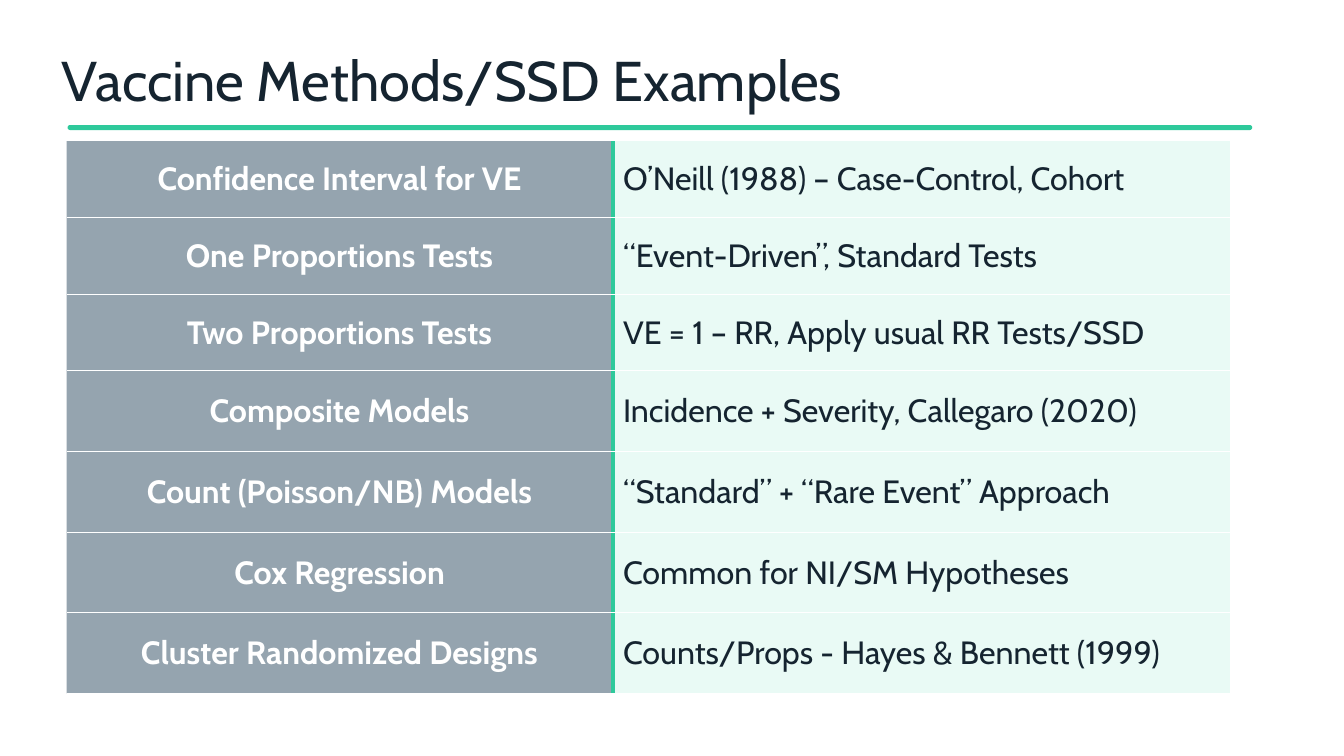
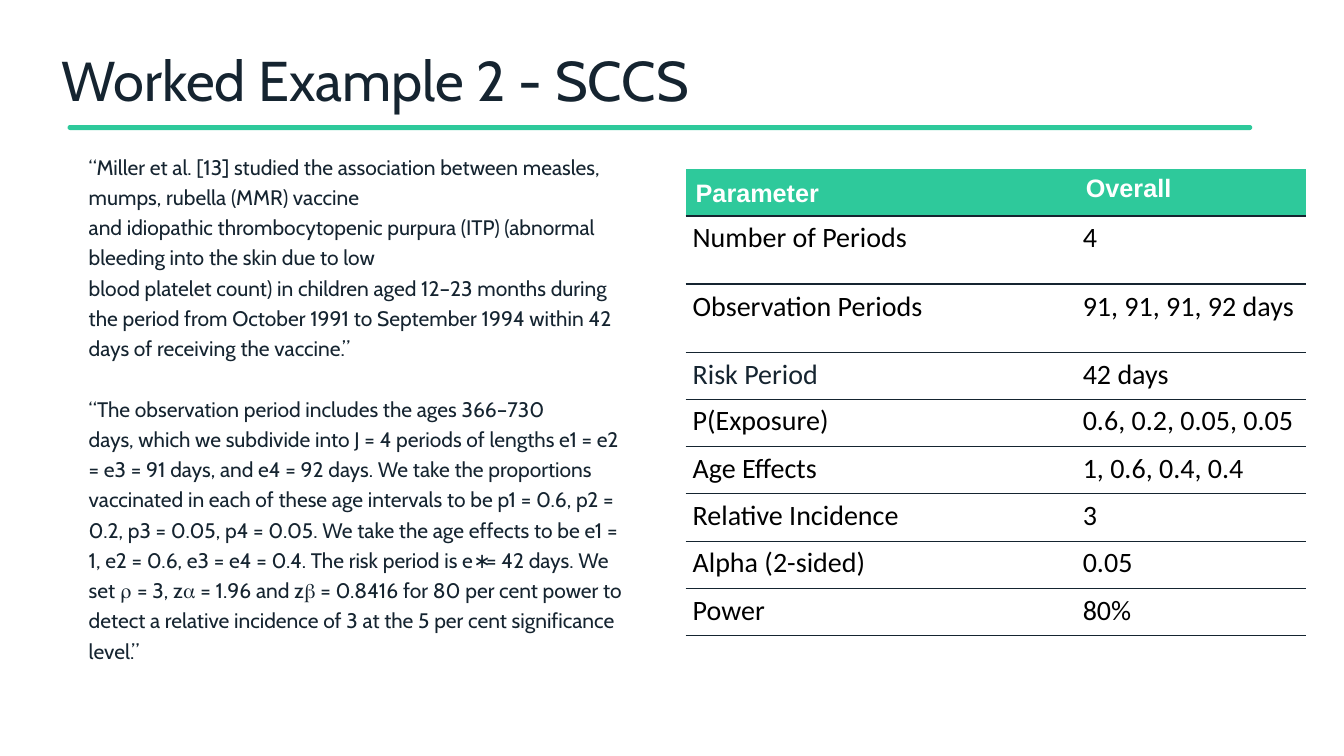
"""Build two slides on vaccine study methods and a worked SCCS example."""
import lxml.etree
import pptx
import pptx.dml.color
import pptx.enum.shapes
import pptx.enum.text
import pptx.oxml.ns
import pptx.util

Inches = pptx.util.Inches
Pt = pptx.util.Pt
rgb = pptx.dml.color.RGBColor.from_string
qn = pptx.oxml.ns.qn
ALIGN = pptx.enum.text.PP_ALIGN
ANCHOR = pptx.enum.text.MSO_ANCHOR

GREEN, INK, WHITE, BLACK = "2EC99B", "152430", "FFFFFF", "000000"
SLATE, MINT = "27465D", "D3F5EB"
PLAIN_TABLE = "{2D5ABB26-0587-4C30-8999-92F81FD0307C}"


def write(para, text, name, size, color, bold=False, **layout):
    """Put one formatted span into a paragraph."""
    span = para.add_run()
    span.text = text
    for key, value in {"name": name, "size": Pt(size), "bold": bold}.items():
        setattr(span.font, key, value)
    span.font.color.rgb = rgb(color)
    for key, value in layout.items():
        setattr(para, key, value)


def dress(cell, fill, borders, inset_x, inset_y, opacity=100):
    """Set a cell's fill, margins and borders, given as {side: (colour, points)}."""
    cell.fill.solid()
    cell.fill.fore_color.rgb = rgb(fill)
    margins = {"margin_left": inset_x, "margin_right": inset_x,
               "margin_top": inset_y, "margin_bottom": inset_y}
    for key, value in margins.items():
        setattr(cell, key, Inches(value))
    properties = cell._tc.get_or_add_tcPr()
    if opacity < 100:
        tint = properties.find(".//" + qn("a:srgbClr"))
        lxml.etree.SubElement(tint, qn("a:alpha"), val=str(opacity * 1000))
    sides = [side for side in "LRTB" if side in borders]
    for position, side in enumerate(sides):
        color, width = borders[side]
        line = lxml.etree.Element(qn("a:ln" + side), w=str(int(Pt(width))))
        solid = lxml.etree.SubElement(line, qn("a:solidFill"))
        lxml.etree.SubElement(solid, qn("a:srgbClr"), val=color)
        properties.insert(position, line)


methods = [
    ("Confidence Interval for VE", "O’Neill (1988) – Case-Control, Cohort"),
    ("One Proportions Tests", "“Event-Driven”, Standard Tests"),
    ("Two Proportions Tests", "VE = 1 – RR, Apply usual RR Tests/SSD"),
    ("Composite Models", "Incidence + Severity, Callegaro (2020)"),
    ("Count (Poisson/NB) Models", "“Standard” + “Rare Event” Approach"),
    ("Cox Regression", "Common for NI/SM Hypotheses"),
    ("Cluster Randomized Designs", "Counts/Props - Hayes & Bennett (1999)"),
]
parameters = [
    ("Parameter", "Overall"),
    ("Number of Periods", "4"),
    ("Observation Periods", "91, 91, 91, 92 days"),
    ("Risk Period", "42 days"),
    ("P(Exposure)", "0.6, 0.2, 0.05, 0.05"),
    ("Age Effects", "1, 0.6, 0.4, 0.4"),
    ("Relative Incidence", "3"),
    ("Alpha (2-sided)", "0.05"),
    ("Power", "80%"),
]
quotes = [
    "“Miller et al. [13] studied the association between measles, mumps, rubella (MMR) vaccine",
    "and idiopathic thrombocytopenic purpura (ITP) (abnormal bleeding into the skin due to low",
    "blood platelet count) in children aged 12–23 months during the period from October 1991 "
    "to September 1994 within 42 days of receiving the vaccine.”",
    "“The observation period includes the ages 366–730",
    "days, which we subdivide into J = 4 periods of lengths e1 = e2 = e3 = 91 days, and "
    "e4 = 92 days. We take the proportions vaccinated in each of these age intervals to be "
    "p1 = 0.6, p2 = 0.2, p3 = 0.05, p4 = 0.05. We take the age effects to be e1 = 1, "
    "e2 = 0.6, e3 = e4 = 0.4. The risk period is e∗ = 42 days. We set ⍴ = 3, z⍺ = 1.96 and "
    "zꞵ = 0.8416 for 80 per cent power to detect a relative incidence of 3 at the 5 per cent "
    "significance level.”",
]
slides = [
    {"title": "Vaccine Methods/SSD Examples", "rows": methods, "at": (0.66, 1.4),
     "widths": (5.42, 6.12), "heights": [0.76] * 3 + [0.8] * 4},
    {"title": "Worked Example 2 - SCCS", "rows": parameters, "at": (6.8, 1.68),
     "widths": (3.87, 2.28), "heights": [0.43, 0.68, 0.68, 0.46] + [0.47] * 5},
]

deck = pptx.Presentation()
deck.slide_width, deck.slide_height = Inches(13.33), Inches(7.5)
pages, tables = [], []

for content in slides:
    page = deck.slides.add_slide(deck.slide_layouts[6])
    rule = page.shapes.add_shape(
        pptx.enum.shapes.MSO_SHAPE.ROUNDED_RECTANGLE,
        Inches(0.67), Inches(1.24), Inches(11.75), Inches(0.05))
    rule.adjustments[0] = 0.5
    rule.shadow.inherit = False
    rule.fill.solid()
    rule.fill.fore_color.rgb = rgb(GREEN)
    rule.line.fill.background()

    title = page.shapes.add_textbox(Inches(0.58), Inches(0.38), Inches(12.16), Inches(0.78))
    frame = title.text_frame
    frame.word_wrap = True
    frame.vertical_anchor = ANCHOR.BOTTOM
    for side in ("left", "right", "top", "bottom"):
        setattr(frame, "margin_" + side, Inches(0.03))
    write(frame.paragraphs[0], content["title"], "Cabin", 40, INK, line_spacing=0.9)

    left, top = content["at"]
    widths, heights = content["widths"], content["heights"]
    table = page.shapes.add_table(
        len(heights), len(widths), Inches(left), Inches(top),
        Inches(sum(widths)), Inches(sum(heights))).table
    table.first_row = table.horz_banding = False
    table._tbl.tblPr.find(qn("a:tableStyleId")).text = PLAIN_TABLE
    for column, width in zip(table.columns, widths):
        column.width = Inches(width)
    for row, height in zip(table.rows, heights):
        row.height = Inches(height)
    pages.append(page)
    tables.append(table)

for index, (method, detail) in enumerate(methods):
    name_cell, detail_cell = tables[0].rows[index].cells
    edges = {"B": (WHITE, 1)}
    if index:
        edges["T"] = (WHITE, 1)
    dress(name_cell, SLATE, {**edges, "R": (GREEN, 3)}, 0.1, 0.1, opacity=49)
    dress(detail_cell, MINT, {**edges, "L": (GREEN, 3)}, 0.1, 0.1, opacity=49)
    name_cell.vertical_anchor = detail_cell.vertical_anchor = ANCHOR.MIDDLE
    write(name_cell.text_frame.paragraphs[0], method, "Cabin", 23, WHITE, True,
          alignment=ALIGN.CENTER)
    write(detail_cell.text_frame.paragraphs[0], detail, "Cabin", 23, INK)

quote_box = pages[1].shapes.add_textbox(Inches(0.88), Inches(1.48), Inches(5.35), Inches(5.42))
frame = quote_box.text_frame
frame.word_wrap = True
for side in ("left", "right", "top", "bottom"):
    setattr(frame, "margin_" + side, 0)
for index, quote in enumerate(quotes):
    para = frame.add_paragraph() if index else frame.paragraphs[0]
    opens_second_quote = index > 0 and quote.startswith("“")
    write(para, quote, "Cabin", 15, INK, line_spacing=1.2,
          space_before=Pt(21.6 if opens_second_quote else 0))

for index, texts in enumerate(parameters):
    edges = {"B": (INK, 1.5 if index < 2 else 0.75)}
    if index:
        edges["T"] = (INK, 1.5 if index < 3 else 0.75)
    for column, text in enumerate(texts):
        cell = tables[1].cell(index, column)
        para = cell.text_frame.paragraphs[0]
        if index == 0:
            dress(cell, GREEN, edges, 0.1, 0.05)
            write(para, text, "Arial", 18, WHITE, True, line_spacing=(1.2, 1.0)[column])
        else:
            dress(cell, WHITE, edges, 0.07, 0.05)
            write(para, text, "Calibri", 20, INK if text == "Risk Period" else BLACK)

deck.save("out.pptx")
